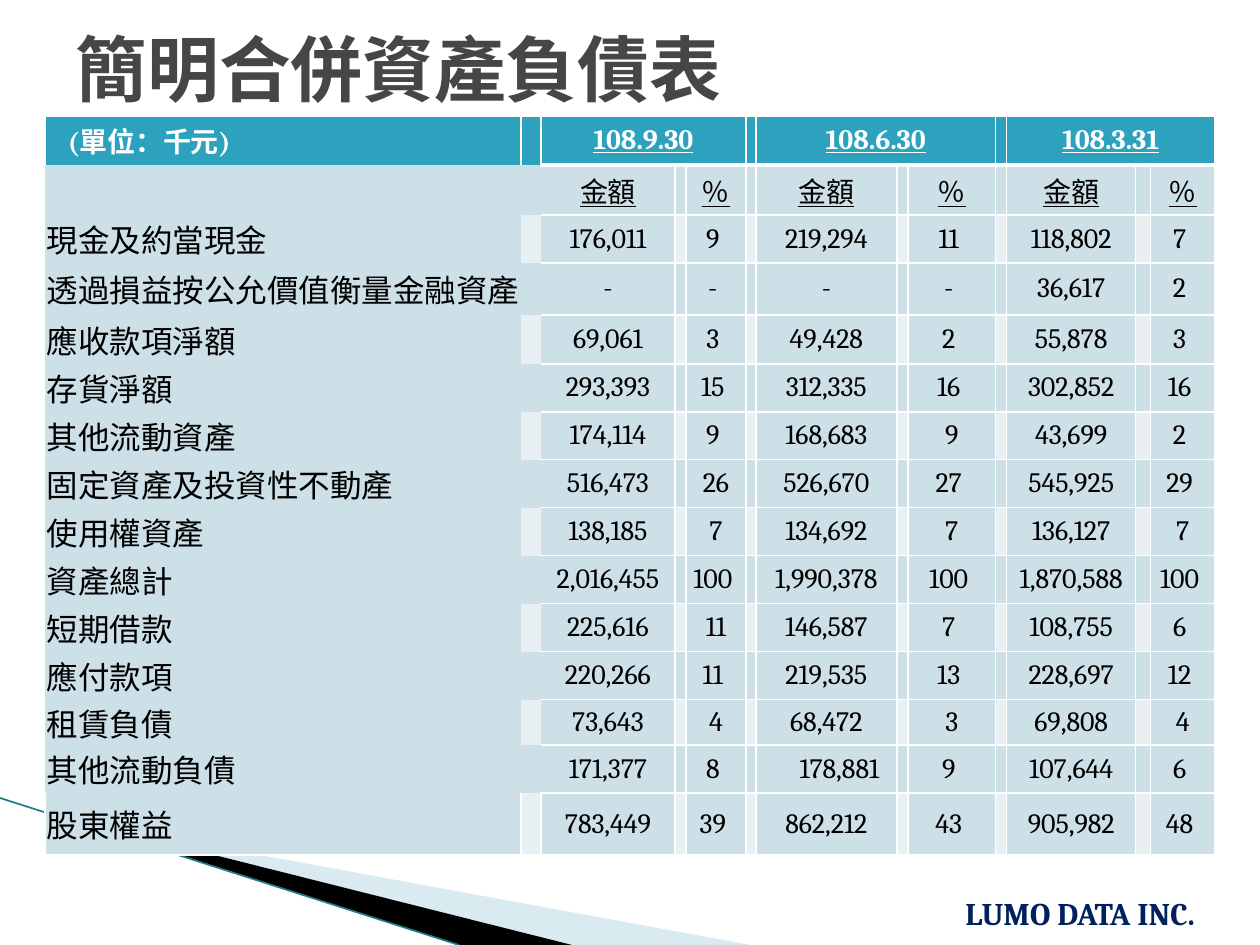
from dataclasses import dataclass

from lxml.etree import SubElement
from pptx import Presentation
from pptx.dml.color import RGBColor
from pptx.enum.shapes import MSO_CONNECTOR
from pptx.enum.text import MSO_ANCHOR, MSO_AUTO_SIZE, PP_ALIGN
from pptx.oxml import parse_xml
from pptx.oxml.ns import nsdecls, qn
from pptx.util import Pt

PX = 914400 / 126


@dataclass(frozen=True)
class Theme:
    latin: str = "Cambria"
    cjk: str = "Noto Sans CJK SC"
    title: str = "464646"
    text: str = "000000"
    white: str = "FFFFFF"
    header: str = "2DA2BF"
    cell: str = "CDE0E8"
    gap: str = "E8F0F4"
    brand: str = "002060"
    wedge: str = "A0CBDC"
    edge: str = "1F7A8C"
    title_size: int = 41
    label_size: int = 18
    value_size: int = 16


T = Theme()
PERIODS = ["108.9.30", "108.6.30", "108.3.31"]
ACCOUNTS = [
    ("現金及約當現金", "176,011", "9 ", "219,294", "11 ", "118,802", "7 "),
    ("透過損益按公允價值衡量金融資產", "-", "- ", "-", "- ", "36,617", "2 "),
    ("應收款項淨額", "69,061", "3 ", "49,428", "2 ", "55,878", "3 "),
    ("存貨淨額", "293,393", "15 ", "312,335", "16 ", "302,852", "16 "),
    ("其他流動資產", "174,114", "9 ", "168,683", "9", "43,699", "2 "),
    ("固定資產及投資性不動產", "516,473", "26", "526,670", "27 ", "545,925", "29 "),
    ("使用權資產", "138,185", "7", "134,692", "7", "136,127", "7"),
    ("資產總計", "2,016,455", "100 ", "1,990,378", "100 ", "1,870,588", "100 "),
    ("短期借款", "225,616", "11", "146,587", "7 ", "108,755", "6 "),
    ("應付款項", "220,266", "11 ", "219,535", "13 ", "228,697", "12 "),
    ("租賃負債", "73,643", "4", "68,472", "3", "69,808", "4"),
    ("其他流動負債", "171,377", "8 ", "178,881", "9 ", "107,644", "6 "),
    ("股東權益", "783,449", "39 ", "862,212", "43 ", "905,982", "48 "),
]
COLS = [476, 20, 134, 11, 60, 10, 141, 11, 88, 11, 129, 15, 64]
ROWS = [49, 50, 48, 52, 49, *[48] * 7, 43, 48, 62]
WIDE_ROW = 3      # its label runs over the first gap column
SHIFTED = (13, 6)  # amount set off to the right


def px(n):
    return round(n * PX)


def rgb(value):
    return RGBColor.from_string(value)


def add_run(p, text, size, color, bold=False, underline=False, latin=T.latin):
    r = p.add_run()
    r.text = text
    f = r.font
    f.size, f.bold, f.underline, f.name = Pt(size), bold, underline, latin
    f.color.rgb = rgb(color)
    SubElement(r._r.get_or_add_rPr(), qn("a:ea")).set("typeface", T.cjk)


def set_borders(cell, widths):
    """Give white borders by side (L, R, T, B) in points; 0 means none."""
    tc_pr = cell._tc.get_or_add_tcPr()
    for i, side in enumerate("LRTB"):
        w = widths.get(side, 0)
        paint = f'<a:solidFill><a:srgbClr val="{T.white}"/></a:solidFill>' if w else "<a:noFill/>"
        tc_pr.insert(i, parse_xml(
            f'<a:ln{side} {nsdecls("a")} w="{Pt(w)}">{paint}</a:ln{side}>'))


def cell_borders(row, col):
    if row == 0:
        return {"L": 1, "R": 1, "T": 1, "B": 3 if col > 1 else 0}
    if col > 1:
        return {"L": 1 if col > 2 else 0, "R": 1, "T": 3 if row == 1 else 1, "B": 1}
    return {"L": 1, "R": 1, "B": 1} if row == len(ROWS) - 1 else {}


def style_cell(cell, row, col):
    is_gap = col % 2 == 1 and row > 1 and row % 2 == 0
    cell.fill.solid()
    cell.fill.fore_color.rgb = rgb(T.header if row == 0 else T.gap if is_gap else T.cell)
    cell.margin_left = cell.margin_right = px(2)
    cell.margin_top = cell.margin_bottom = 0
    cell.vertical_anchor = MSO_ANCHOR.MIDDLE
    set_borders(cell, cell_borders(row, col))


def write_cell(cell, text, size=T.value_size, color=T.text, centered=True, **style):
    p = cell.text_frame.paragraphs[0]
    p.alignment = PP_ALIGN.CENTER if centered else PP_ALIGN.LEFT
    add_run(p, text, size, color, **style)
    return p


def add_balance_table(slide, x, y):
    table = slide.shapes.add_table(len(ROWS), len(COLS), px(x), px(y),
                                   px(sum(COLS)), px(sum(ROWS))).table
    table.first_row = table.horz_banding = False
    for column, w in zip(table.columns, COLS):
        column.width = px(w)
    for row, h in zip(table.rows, ROWS):
        row.height = px(h)
    for r in range(len(ROWS)):
        for c in range(len(COLS)):
            style_cell(table.cell(r, c), r, c)

    unit = write_cell(table.cell(0, 0), "(單位：千元)", color=T.white, centered=False, bold=True)
    unit._p.get_or_add_pPr().set("indent", str(px(21)))
    for i, period in enumerate(PERIODS):
        c = 2 + 4 * i
        table.cell(0, c).merge(table.cell(0, c + 2))
        write_cell(table.cell(0, c), period, color=T.white, bold=True, underline=True)
        write_cell(table.cell(1, c), "金額", underline=True)
        write_cell(table.cell(1, c + 2), "％", underline=True)

    table.cell(WIDE_ROW, 0).merge(table.cell(WIDE_ROW, 1))
    for r, (label, *values) in enumerate(ACCOUNTS, start=2):
        write_cell(table.cell(r, 0), label, T.label_size, centered=False)
        for i, value in enumerate(values):
            c = 2 + 2 * i
            p = write_cell(table.cell(r, c), value)
            if (r, c) == SHIFTED:
                p._p.get_or_add_pPr().set("marL", str(px(26)))


def add_wedge(slide, points, color, alpha=100):
    builder = slide.shapes.build_freeform(*points[0], scale=PX)
    builder.add_line_segments(points[1:], close=True)
    sp = builder.convert_to_shape()
    sp.shadow.inherit = False
    sp.line.fill.background()
    sp.fill.solid()
    sp.fill.fore_color.rgb = rgb(color)
    if alpha < 100:
        clr = sp._element.spPr.find(".//" + qn("a:srgbClr"))
        SubElement(clr, qn("a:alpha")).set("val", str(alpha * 1000))


def add_corner(slide, x, y):
    """Draw the wedges and the edge line that fall towards the bottom of the slide."""
    def at(*points):
        return [(x + dx, y + dy) for dx, dy in points]

    add_wedge(slide, at((69, 22), (750, 147), (571, 147), (69, 21)), T.wedge, 40)
    add_wedge(slide, at((67, 20), (572, 147), (460, 147), (68, 21)), T.text)
    (x1, y1), (x2, y2) = at((0, 0), (459, 147))
    line = slide.shapes.add_connector(MSO_CONNECTOR.STRAIGHT, px(x1), px(y1), px(x2), px(y2))
    line.line.color.rgb = rgb(T.edge)
    line.line.width = Pt(0.95)
    SubElement(line._element.spPr, qn("a:effectLst"))


def set_title(slide, x, y, w, h):
    sp = slide.shapes.title
    sp.left, sp.top, sp.width, sp.height = px(x), px(y), px(w), px(h)
    tf = sp.text_frame
    tf.auto_size = MSO_AUTO_SIZE.NONE
    tf.vertical_anchor = MSO_ANCHOR.TOP
    p = tf.paragraphs[0]
    p.alignment = PP_ALIGN.LEFT
    add_run(p, "簡明合併資產負債表", T.title_size, T.title, bold=True, latin=T.cjk)


def add_company(slide, x, y, w, h):
    tf = slide.shapes.add_textbox(px(x), px(y), px(w), px(h)).text_frame
    tf.word_wrap = True
    add_run(tf.paragraphs[0], "LUMO DATA INC.", T.label_size, T.brand, bold=True)


def main():
    prs = Presentation()
    prs.slide_width, prs.slide_height = px(1260), px(945)
    slide = prs.slides.add_slide(prs.slide_layouts[5])
    add_corner(slide, 0, 798)
    add_balance_table(slide, 45, 116)
    add_company(slide, 953, 888, 299, 50)
    set_title(slide, 63, 18, 1134, 158)
    prs.save("out.pptx")


if __name__ == "__main__":
    main()
